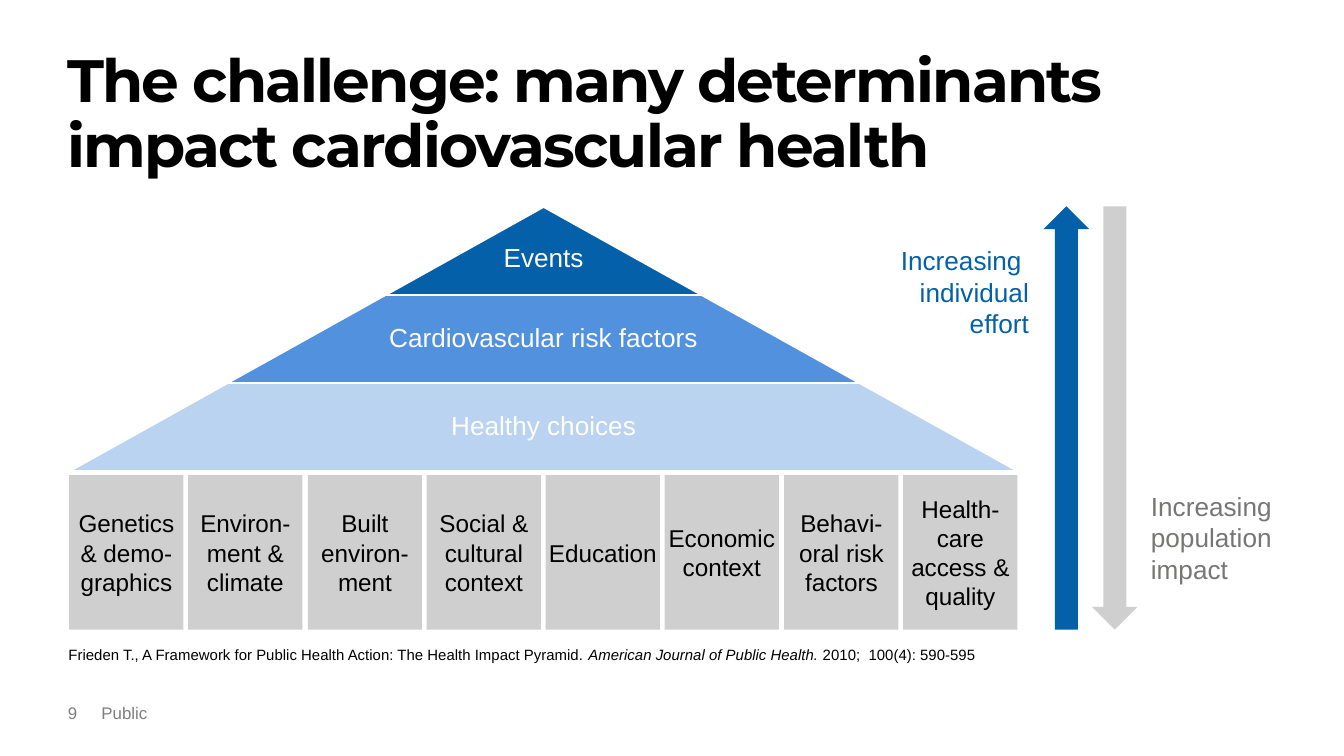
from pptx import Presentation
from pptx import util as u
from pptx.dml.color import RGBColor
from pptx.enum import shapes, text

PX = 4572  # 200 px to the inch
SHAPE = shapes.MSO_SHAPE
ALIGN = text.PP_ALIGN
ANCHOR = text.MSO_ANCHOR
BLUE, GREY, WHITE, BLACK = "0460A9", "CFCFCF", "FFFFFF", "000000"
MUTED = "7F7F7F"


def paint(color):
    return RGBColor.from_string(color)


def write(frame, lines, size=14, color=BLACK, font="Arial", bold=None,
          align=ALIGN.LEFT, anchor=ANCHOR.TOP, pad=(0, 0), space=None):
    """Fill a frame; each line is a string or a list of (string, italic)."""
    frame.word_wrap = True
    frame.auto_size = text.MSO_AUTO_SIZE.NONE
    frame.vertical_anchor = anchor
    frame.margin_left = frame.margin_right = pad[0] * PX
    frame.margin_top = frame.margin_bottom = pad[1] * PX
    for i, line in enumerate(lines):
        para = frame.add_paragraph() if i else frame.paragraphs[0]
        para.alignment = align
        if space:
            para.line_spacing = space
        for part, slant in [(line, None)] if isinstance(line, str) else line:
            # A line break inside a paragraph starts a new run
            for j, piece in enumerate(part.split("\n")):
                if j:
                    para.add_line_break()
                run = para.add_run()
                run.text = piece
                face = run.font
                face.name, face.size = font, u.Pt(size)
                face.bold, face.italic = bold, slant
                face.color.rgb = paint(color)


class Deck:
    def __init__(self, width, height):
        self.prs = Presentation()
        self.prs.slide_width = width * PX
        self.prs.slide_height = height * PX
        self.slide = self.prs.slides.add_slide(self.prs.slide_layouts[5])

    def title(self, words, left, top, width, height):
        box = self.slide.shapes.title
        box.left, box.top = left * PX, top * PX
        box.width, box.height = width * PX, height * PX
        write(box.text_frame, [words], size=32, font="Montserrat",
              bold=True, space=0.9)
        # Tighten the letters by one point
        for run in box.text_frame.paragraphs[0].runs:
            run.font._element.set("spc", "-100")

    def label(self, lines, left, top, width, height, **style):
        box = self.slide.shapes.add_textbox(
            left * PX, top * PX, width * PX, height * PX)
        write(box.text_frame, lines, **style)

    def shape(self, kind, left, top, width, height, fill, line=None):
        item = self.slide.shapes.add_shape(
            kind, left * PX, top * PX, width * PX, height * PX)
        item.shadow.inherit = False
        item.fill.solid()
        item.fill.fore_color.rgb = paint(fill)
        if line:
            item.line.color.rgb = paint(line)
            item.line.width = u.Pt(1)
        else:
            item.line.fill.background()
        return item


def main():
    deck = Deck(2000, 1125)
    deck.title("The challenge: many determinants impact cardiovascular health",
               100, 76, 1800, 210)

    # Base row: eight equal blocks; long single words get no side margin
    blocks = [("Genetics & demo-graphics", 10), ("Environ-ment & climate", 10),
              ("Built environ-ment", 10), ("Social & cultural context", 10),
              ("Education", 0), ("Economic context", 0),
              ("Behavi-oral risk factors", 10),
              ("Health-care access & quality", 10)]
    first, last, wide = 103, 1344, 170
    for i, (words, side) in enumerate(blocks):
        left = first + round(i * (last - first) / (len(blocks) - 1))
        block = deck.shape(SHAPE.RECTANGLE, left, 707, wide, 230, GREY)
        write(block.text_frame, [words], size=13, align=ALIGN.CENTER,
              anchor=ANCHOR.MIDDLE, pad=(side, 10))

    # Pyramid: each tier is one step wider; the tip's label sits lower
    tiers = [("Events", BLUE, 12), ("Cardiovascular risk factors", "5191DD", 0),
             ("Healthy choices", "B9D3F1", 0)]
    mid, top, step, tall = 809, 308, 470, 131
    for i, (words, fill, drop) in enumerate(tiers):
        width = step * (i + 1)
        left, y = mid - width // 2, top + i * tall
        tier = deck.shape(SHAPE.TRAPEZOID, left, y, width, tall, fill, WHITE)
        tier.adjustments[0] = step / 2 / tall
        deck.label([words], left, y + drop, width, tall, color=WHITE,
                   align=ALIGN.CENTER, anchor=ANCHOR.MIDDLE, space=0.9)

    # Effort and impact arrows with their labels
    deck.shape(SHAPE.UP_ARROW, 1553, 307, 68, 630, BLUE)
    deck.shape(SHAPE.DOWN_ARROW, 1625, 307, 68, 630, GREY)
    deck.label(["Increasing \nindividual effort"], 1260, 354, 291, 162,
               color=BLUE, align=ALIGN.RIGHT, pad=(20, 10))
    deck.label(["Increasing \npopulation", "impact"], 1693, 720, 236, 162,
               color="767675", pad=(20, 10))

    # Source line and footer
    deck.label([[("Frieden T., A Framework for Public Health Action: "
                  "The Health Impact Pyramid. ", False),
                 ("American Journal of Public Health.", True),
                 (" 2010;  100(4): 590-595", False)]],
               102, 961, 1614, 26, size=8, anchor=ANCHOR.BOTTOM)
    deck.label(["9"], 101, 1046, 50, 50, size=9, color=MUTED)
    deck.label(["Public"], 151, 1046, 830, 50, size=9, color=MUTED)

    deck.prs.save("out.pptx")


if __name__ == "__main__":
    main()
